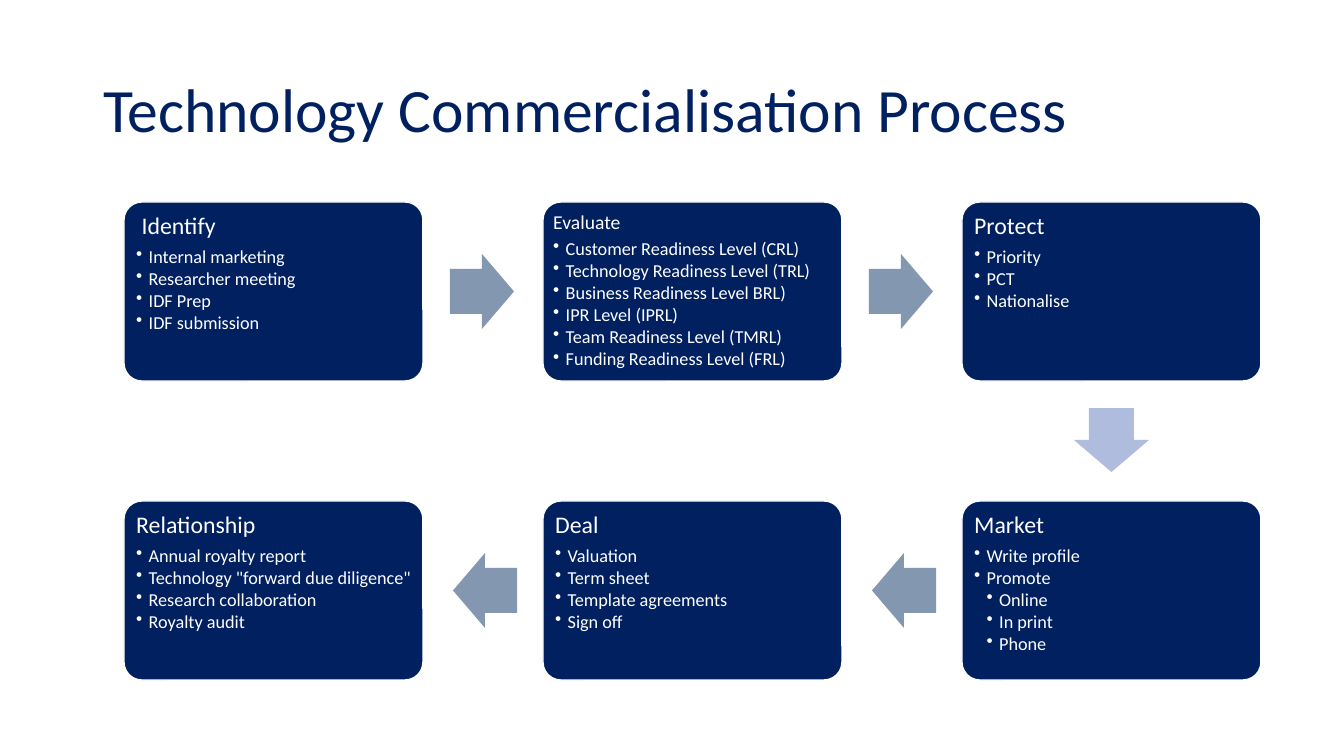
from lxml import etree
from pptx import Presentation
from pptx.dml.color import RGBColor
from pptx.enum.shapes import MSO_SHAPE
from pptx.enum.text import MSO_ANCHOR, PP_ALIGN
from pptx.oxml.ns import qn
from pptx.util import Emu, Pt

NAVY = RGBColor(0x00, 0x20, 0x60)
WHITE = RGBColor(0xFF, 0xFF, 0xFF)
SLATE = RGBColor(0x84, 0x97, 0xB0)
LAVENDER = RGBColor(0xB0, 0xBC, 0xDE)
ROUNDED = MSO_SHAPE.ROUNDED_RECTANGLE
RIGHT = MSO_SHAPE.RIGHT_ARROW
LEFT = MSO_SHAPE.LEFT_ARROW
DOWN = MSO_SHAPE.DOWN_ARROW
MIDDLE = MSO_ANCHOR.MIDDLE
TOP = MSO_ANCHOR.TOP
ALIGN_LEFT = PP_ALIGN.LEFT

PX = 914400 / 100.8
FIRST_LEFT, COLUMN_STEP = 124, 419
ROW_TOPS = (202, 501)
BOX_WIDTH, BOX_HEIGHT = 299, 179
BULLET_INDENT = 12.5


def px(length):
    return Emu(round(length * PX))


def write(para, text, size, color=WHITE, after=0, level=0):
    """Fill one paragraph; level 1 and up gets a bullet."""
    para.alignment = ALIGN_LEFT
    para.line_spacing = 0.9
    para.space_before = Pt(0)
    para.space_after = Pt(after)
    para.level = level
    span = para.add_run()
    span.text = text
    span.font.name = "Calibri"
    span.font.size = Pt(size)
    span.font.color.rgb = color
    if level:
        properties = para._p.get_or_add_pPr()
        properties.set("marL", str(px(BULLET_INDENT * level)))
        properties.set("indent", str(-px(BULLET_INDENT)))
        etree.SubElement(properties, qn("a:buChar")).set("char", "•")


deck = Presentation()
deck.slide_width, deck.slide_height = px(1344), px(756)
page = deck.slides.add_slide(deck.slide_layouts[5])

# Title
title = page.shapes.title
title.left, title.top, title.width, title.height = px(93), px(40), px(1159), px(146)
title.text_frame.vertical_anchor = MIDDLE
title.text_frame.word_wrap = True
write(title.text_frame.paragraphs[0], "Technology Commercialisation Process", 44, NAVY)

# Stages: column, row, heading, heading size, inset, items as (text, level)
stages = [
    (0, 0, " Identify", 17, 7, [
        ("Internal marketing", 1), ("Researcher meeting", 1),
        ("IDF Prep", 1), ("IDF submission", 1)]),
    (1, 0, "Evaluate", 14, 5, [
        ("Customer Readiness Level (CRL)", 1), ("Technology Readiness Level (TRL)", 1),
        ("Business Readiness Level BRL)", 1), ("IPR Level (IPRL)", 1),
        ("Team Readiness Level (TMRL)", 1), ("Funding Readiness Level (FRL)", 1)]),
    (2, 0, "Protect", 17, 7, [
        ("Priority", 1), ("PCT", 1), ("Nationalise", 1)]),
    (2, 1, "Market", 17, 7, [
        ("Write profile", 1), ("Promote", 1),
        ("Online", 2), ("In print", 2), ("Phone", 2)]),
    (1, 1, "Deal", 17, 7, [
        ("Valuation", 1), ("Term sheet", 1),
        ("Template agreements", 1), ("Sign off", 1)]),
    (0, 1, "Relationship", 17, 7, [
        ("Annual royalty report", 1), ('Technology "forward due diligence"', 1),
        ("Research collaboration", 1), ("Royalty audit", 1)]),
]
for column, row, heading, size, inset, items in stages:
    box = page.shapes.add_shape(
        ROUNDED, px(FIRST_LEFT + column * COLUMN_STEP), px(ROW_TOPS[row]),
        px(BOX_WIDTH), px(BOX_HEIGHT))
    box.adjustments[0] = 0.1
    box.shadow.inherit = False
    box.fill.solid()
    box.fill.fore_color.rgb = NAVY
    box.line.color.rgb = WHITE
    box.line.width = Pt(1)
    frame = box.text_frame
    frame.word_wrap = True
    frame.vertical_anchor = TOP
    frame.margin_left = frame.margin_right = px(inset)
    frame.margin_top = frame.margin_bottom = px(inset)
    write(frame.paragraphs[0], heading, size, after=size * 0.32)
    for text, level in items:
        write(frame.add_paragraph(), text, 13, after=1.7, level=level)

# Arrows between the stages: kind, left, top, width, height, colour
arrows = [(DOWN, 1074, 408, 75, 64, LAVENDER)]
for gap in range(2):
    start = FIRST_LEFT + gap * COLUMN_STEP
    arrows.append((RIGHT, start + 326, ROW_TOPS[0] + 52, 64, 75, SLATE))
    arrows.append((LEFT, start + 329, ROW_TOPS[1] + 52, 64, 75, SLATE))
for kind, left, top, width, height, color in arrows:
    arrow = page.shapes.add_shape(kind, px(left), px(top), px(width), px(height))
    arrow.adjustments[0] = 0.6
    arrow.adjustments[1] = 0.5
    arrow.shadow.inherit = False
    arrow.fill.solid()
    arrow.fill.fore_color.rgb = color
    arrow.line.fill.background()

deck.save("out.pptx")
